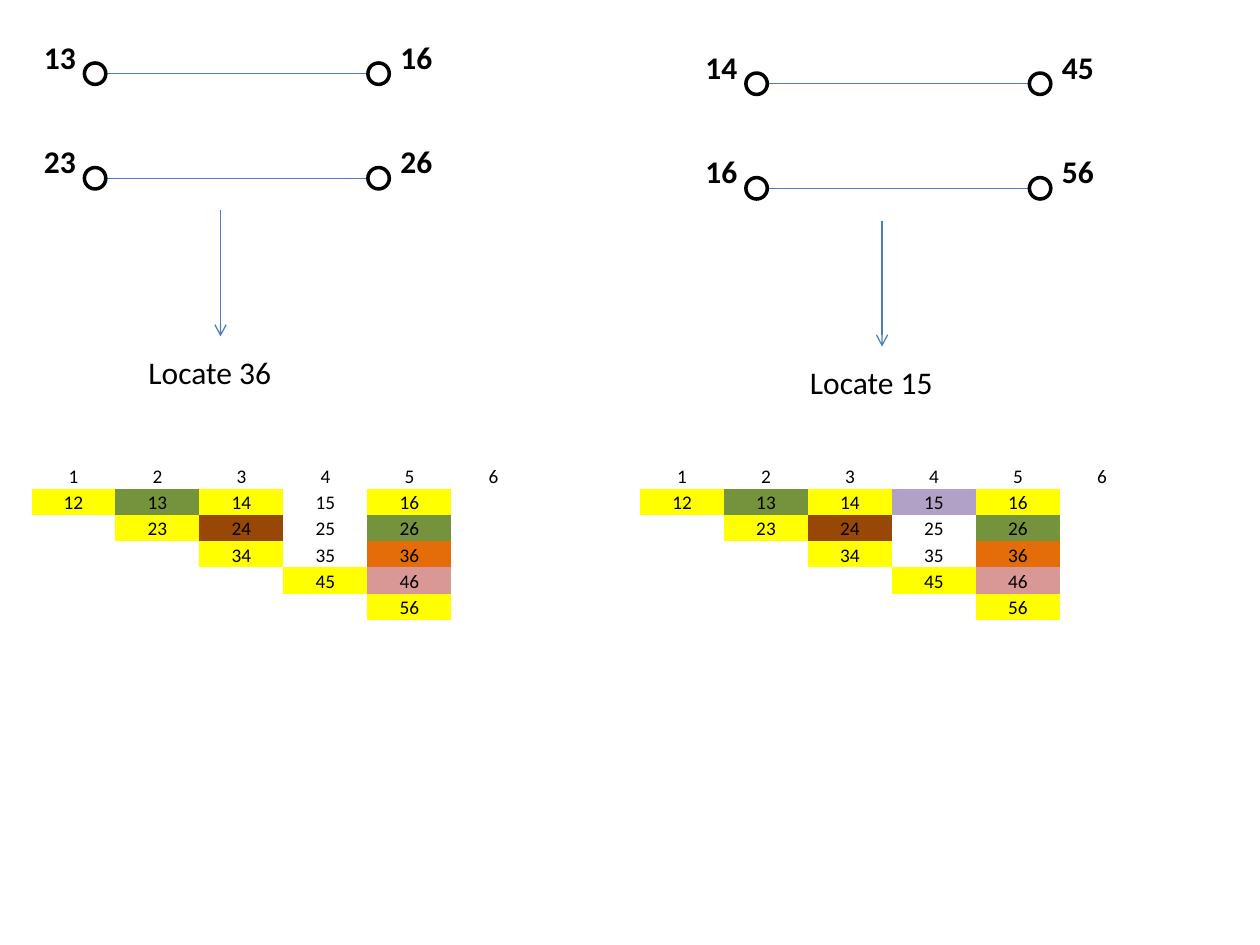
import pptx
import pptx.dml.color
import pptx.enum.shapes
import pptx.enum.text
import pptx.oxml.ns
import pptx.util
from lxml import etree

Inches = pptx.util.Inches
Pt = pptx.util.Pt
qn = pptx.oxml.ns.qn

FONT = "Calibri"
BLACK = "000000"
LINE_BLUE = "4B7EBC"
NO_STYLE_NO_GRID = "{2D5ABB26-0587-4C30-8999-92F81FD0307C}"
NODE_COUNT = 6
NODE_SIZE = 0.17
EDGE_SPACING = 0.83
YELLOW = "FFFF00"
PAIR_FILLS = {
    **dict.fromkeys(["12", "14", "16", "23", "34", "45", "56"], YELLOW),
    "13": "75923C", "26": "75923C", "24": "974807",
    "36": "E46D0A", "46": "D99795",
}


def color(hex_string):
    return pptx.dml.color.RGBColor.from_string(hex_string)


def add_run(paragraph, text, size, bold=False):
    run = paragraph.add_run()
    run.text = text
    run.font.name = FONT
    run.font.size = Pt(size)
    run.font.bold = bold
    run.font.color.rgb = color(BLACK)


def add_label(slide, left, top, width, text, bold=False, wrap=False):
    box = slide.shapes.add_textbox(Inches(left), Inches(top), Inches(width), Inches(0.4))
    frame = box.text_frame
    frame.word_wrap = wrap
    frame.auto_size = pptx.enum.text.MSO_AUTO_SIZE.SHAPE_TO_FIT_TEXT
    add_run(frame.paragraphs[0], text, 18, bold)


def add_line(slide, begin_x, begin_y, end_x, end_y, arrow=False):
    connector = slide.shapes.add_connector(
        pptx.enum.shapes.MSO_CONNECTOR.STRAIGHT,
        Inches(begin_x), Inches(begin_y), Inches(end_x), Inches(end_y))
    connector.line.color.rgb = color(LINE_BLUE)
    connector.line.width = Pt(0.75)
    if arrow:
        etree.SubElement(connector.line._get_or_add_ln(), qn("a:tailEnd"), type="arrow")
    etree.SubElement(connector._element.spPr, qn("a:effectLst"))


def add_node(slide, left, top):
    node = slide.shapes.add_shape(
        pptx.enum.shapes.MSO_SHAPE.OVAL,
        Inches(left), Inches(top), Inches(NODE_SIZE), Inches(NODE_SIZE))
    node.shadow.inherit = False
    node.fill.background()
    node.line.color.rgb = color(BLACK)
    node.line.width = Pt(2)


def add_edge(slide, left, top, start, end):
    """Two labelled nodes joined by a line."""
    middle = top + 0.25 + NODE_SIZE / 2
    add_line(slide, left + 0.58, middle, left + 2.67, middle)
    for node_left, label_left, text in ((0.42, 0, start), (2.67, 2.83, end)):
        add_node(slide, left + node_left, top + 0.25)
        add_label(slide, left + label_left, top, 0.46, text, bold=True)


def add_edge_group(slide, left, top, edges, result):
    """Stacked edges with an arrow down to the pair they locate."""
    for index, (start, end) in enumerate(edges):
        add_edge(slide, left, top + index * EDGE_SPACING, start, end)
    add_line(slide, left + 1.5, top + 1.42, left + 1.5, top + 2.42, arrow=True)
    add_label(slide, left + 0.83, top + 2.5, 1.42, f"Locate {result}", wrap=True)


def fill_cell(cell, text, fill):
    cell.vertical_anchor = pptx.enum.text.MSO_ANCHOR.BOTTOM
    cell.margin_left = cell.margin_right = cell.margin_top = Inches(0.01)
    cell.margin_bottom = 0
    if fill:
        cell.fill.solid()
        cell.fill.fore_color.rgb = color(fill)
    else:
        cell.fill.background()
    paragraph = cell.text_frame.paragraphs[0]
    paragraph.alignment = pptx.enum.text.PP_ALIGN.CENTER
    if text:
        add_run(paragraph, text, 11)
    else:
        # Keeps an empty cell from growing its row.
        etree.SubElement(paragraph._p, qn("a:endParaRPr"), sz="1100")


def add_pair_table(slide, left, top, width, height, fills):
    """Upper triangle of node pairs under a row of node numbers."""
    frame = slide.shapes.add_table(
        NODE_COUNT, NODE_COUNT, Inches(left), Inches(top), Inches(width), Inches(height))
    table = frame.table
    table.first_row = False
    table.horz_banding = False
    table._tbl.tblPr.find(qn("a:tableStyleId")).text = NO_STYLE_NO_GRID
    for row in range(NODE_COUNT):
        for column in range(NODE_COUNT):
            second = column + 2
            if row == 0:
                text = str(column + 1)
            elif row < second <= NODE_COUNT:
                text = f"{row}{second}"
            else:
                text = ""
            fill_cell(table.cell(row, column), text, fills.get(text))


def main():
    presentation = pptx.Presentation()
    presentation.slide_width = Inches(10)
    presentation.slide_height = Inches(7.5)
    slide = presentation.slides.add_slide(presentation.slide_layouts[6])
    add_edge_group(slide, 0.25, 0.25, [("13", "16"), ("23", "26")], "36")
    add_edge_group(slide, 5.5, 0.33, [("14", "45"), ("16", "56")], "15")
    add_pair_table(slide, 0.25, 3.67, 4, 1.25, PAIR_FILLS)
    add_pair_table(slide, 5.08, 3.67, 4, 1.25, {**PAIR_FILLS, "15": "B2A1C7"})
    presentation.save("out.pptx")


if __name__ == "__main__":
    main()
